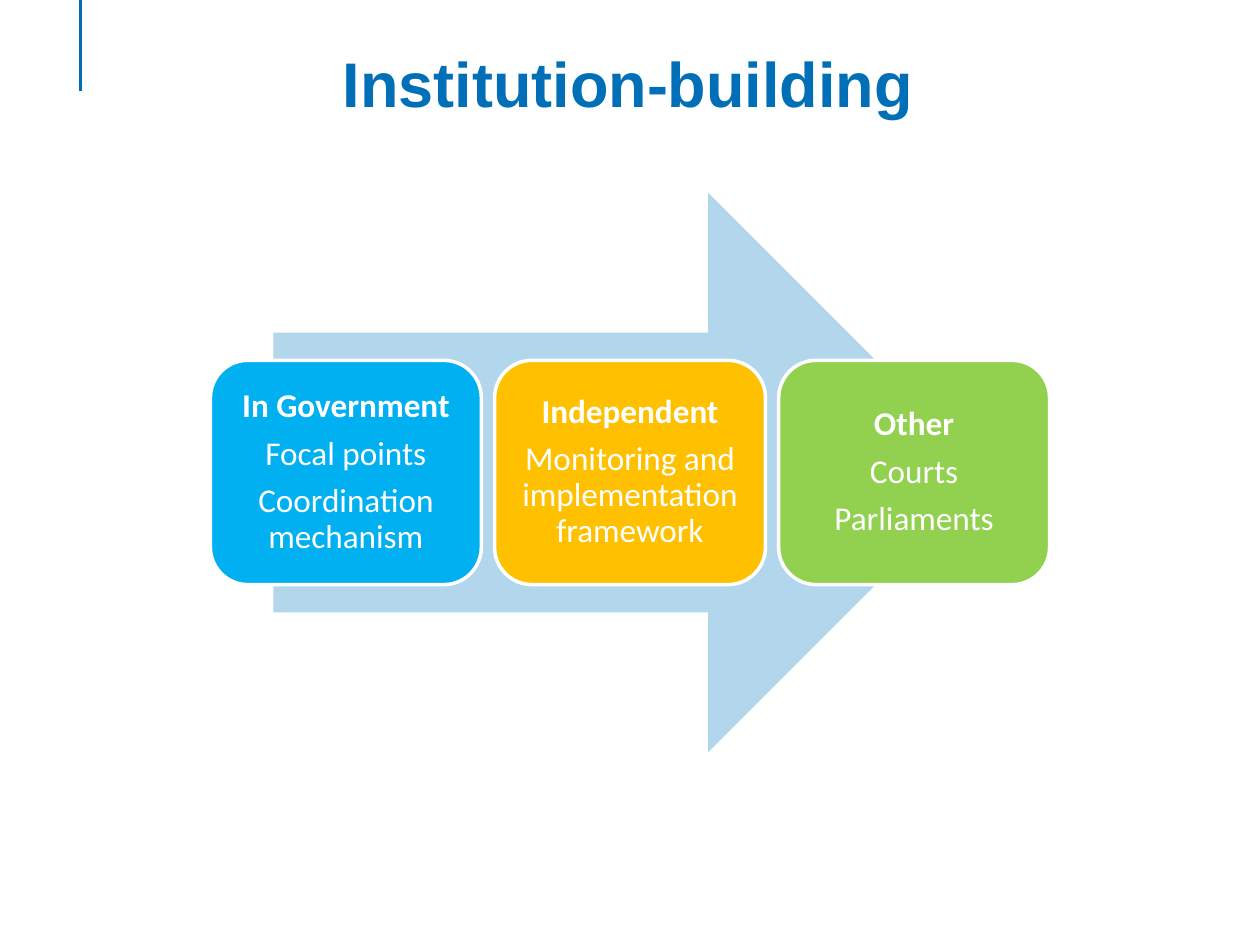
from dataclasses import dataclass

from pptx import Presentation
from pptx.dml.color import RGBColor
from pptx.enum.shapes import MSO_CONNECTOR as Link, MSO_SHAPE as Shape
from pptx.enum.text import MSO_ANCHOR as Anchor, PP_ALIGN as Align
from pptx.oxml import parse_xml
from pptx.oxml.ns import nsdecls
from pptx.util import Inches, Pt


@dataclass(frozen=True)
class Theme:
    blue: str = "006FB7"
    pale: str = "B2D6EC"
    white: str = "FFFFFF"
    sky: str = "00B0F0"
    gold: str = "FFC000"
    green: str = "92D050"
    head: str = "Arial"
    body: str = "Calibri"
    big: float = 36
    small: float = 19
    rule: float = 2
    gap: float = 6.5


class Deck:
    def __init__(self, theme):
        self.theme = theme
        self.prs = Presentation()
        self.prs.slide_width, self.prs.slide_height = Inches(10), Inches(7.5)
        self.slide = self.prs.slides.add_slide(self.prs.slide_layouts[5])

    def style(self, para, face, size, color, bold):
        para.alignment = Align.CENTER
        for run in para.runs:
            font = run.font
            font.name, font.size, font.bold = face, Pt(size), bold
            font.color.rgb = RGBColor.from_string(color)

    def title(self, text, x, y, w, h):
        box = self.slide.shapes.title
        box.left, box.top, box.width, box.height = map(Inches, (x, y, w, h))
        frame = box.text_frame
        frame.text = text
        frame.vertical_anchor = Anchor.TOP
        t = self.theme
        self.style(frame.paragraphs[0], t.head, t.big, t.blue, True)

    def line(self, x1, y1, x2, y2, color):
        line = self.slide.shapes.add_connector(
            Link.STRAIGHT, *map(Inches, (x1, y1, x2, y2)))
        line.line.color.rgb = RGBColor.from_string(color)
        line.line.width = Pt(self.theme.rule)
        line._element.spPr.append(parse_xml(f"<a:effectLst {nsdecls('a')}/>"))

    def shape(self, kind, x, y, w, h, fill, edge=None):
        shape = self.slide.shapes.add_shape(kind, *map(Inches, (x, y, w, h)))
        shape.shadow.inherit = False
        shape.fill.solid()
        shape.fill.fore_color.rgb = RGBColor.from_string(fill)
        if edge:
            shape.line.color.rgb = RGBColor.from_string(edge)
            shape.line.width = Pt(self.theme.rule)
        else:
            shape.line.fill.background()
        return shape

    def card(self, x, y, w, h, fill, lines):
        t = self.theme
        frame = self.shape(Shape.ROUNDED_RECTANGLE, x, y, w, h, fill,
                           t.white).text_frame
        frame.word_wrap = True
        frame.vertical_anchor = Anchor.MIDDLE
        frame.margin_left = frame.margin_right = Inches(0.08)
        frame.margin_top = frame.margin_bottom = Inches(0.08)
        frame.text = "\n".join(lines)
        for i, para in enumerate(frame.paragraphs):
            para.line_spacing = 0.9
            para.space_after = Pt(t.gap)
            self.style(para, t.body, t.small, t.white, i == 0)


def main():
    theme = Theme()
    deck = Deck(theme)

    # Heading with the accent rule
    deck.line(0.64, 0, 0.64, 0.72, theme.blue)
    deck.title("Institution-building", 0.39, 0.3, 9.19, 1.19)

    # Arrow behind the cards
    deck.shape(Shape.RIGHT_ARROW, 2.17, 1.53, 5.67, 4.44, theme.pale)

    # Cards, spread evenly between the two edges
    cards = [
        (theme.sky, ["In Government", "Focal points",
                     "Coordination mechanism"]),
        (theme.gold, ["Independent",
                      "Monitoring and implementation framework"]),
        (theme.green, ["Other", "Courts", "Parliaments"]),
    ]
    left, right, wide = 1.67, 8.33, 2.15
    step = (right - left - wide) / (len(cards) - 1)
    for i, (fill, lines) in enumerate(cards):
        deck.card(left + i * step, 2.86, wide, 1.78, fill, lines)

    deck.prs.save("out.pptx")


if __name__ == "__main__":
    main()
